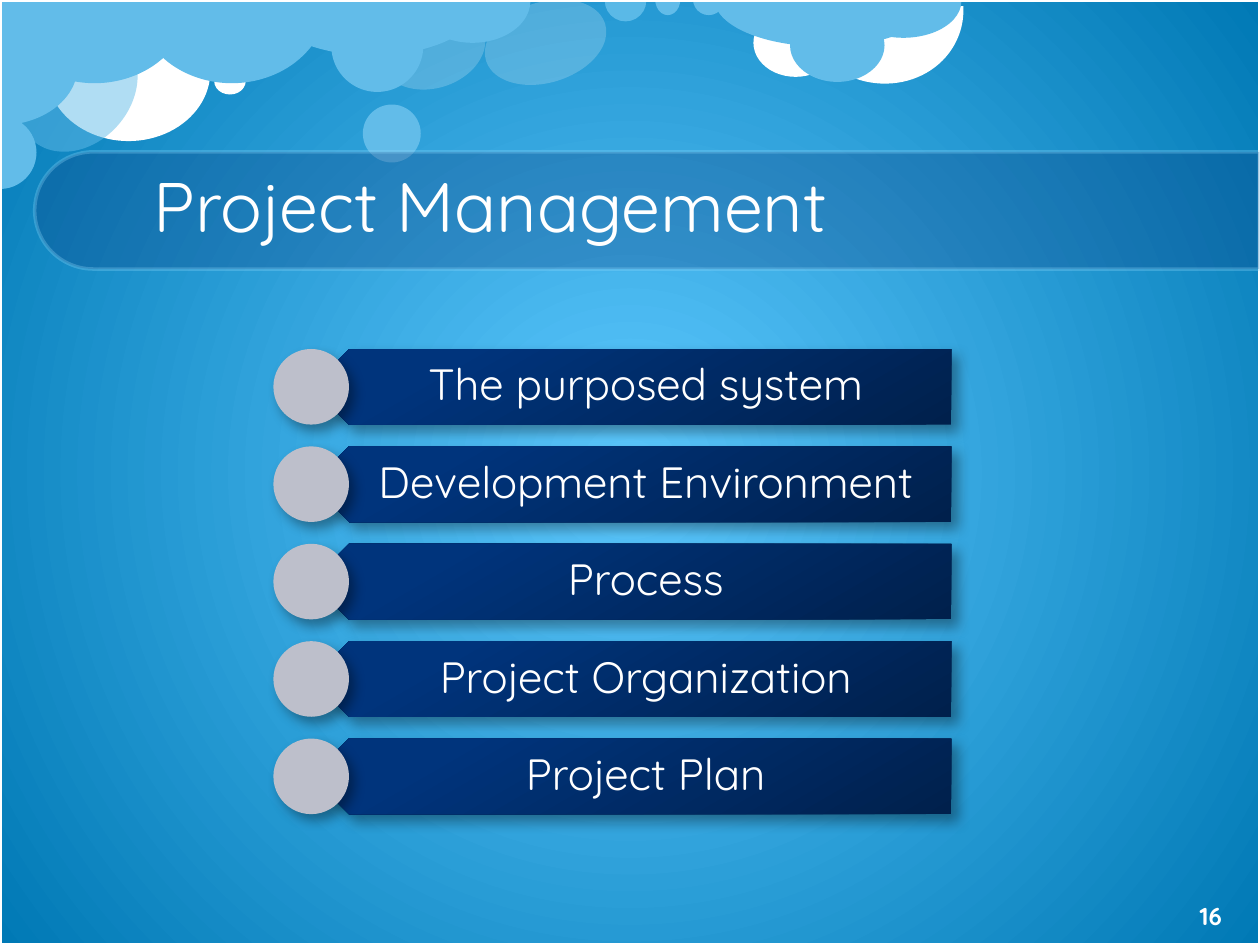
from typing import NamedTuple

from lxml.etree import SubElement
from pptx import Presentation
from pptx.dml.color import RGBColor
from pptx.enum.shapes import MSO_SHAPE
from pptx.enum.text import MSO_ANCHOR, MSO_AUTO_SIZE, PP_ALIGN
from pptx.oxml.ns import qn
from pptx.util import Inches, Pt

WHITE = RGBColor(0xFF, 0xFF, 0xFF)
BLACK = RGBColor(0x00, 0x00, 0x00)
CLOUD = RGBColor(0x62, 0xBC, 0xE9)
PALE = RGBColor(0x8F, 0xD9, 0xFB)
BAND = RGBColor(0x07, 0x37, 0x79)
SKY_CENTRE = RGBColor(0x5D, 0xC9, 0xFF)
SKY_EDGE = RGBColor(0x00, 0x79, 0xB5)
NAVY_DARK = RGBColor(0x00, 0x20, 0x4C)
NAVY = RGBColor(0x00, 0x34, 0x7C)
NAVY_END = RGBColor(0x00, 0x34, 0x7D)
DISC = RGBColor(0xBD, 0xBF, 0xCB)

FONT = "Quicksand"
COLUMNS, ROWS = 100, 75
SLIDE_WIDTH, SLIDE_HEIGHT = Inches(10), Inches(7.5)

HALF = (0, 108.001)
PUFF = (0, 107.771)
CROWN = (151.797, 44.48)


class Frame(NamedTuple):
    left: float
    top: float
    width: float
    height: float

    def lengths(self) -> tuple:
        column, row = SLIDE_WIDTH / COLUMNS, SLIDE_HEIGHT / ROWS
        return (round(self.left * column), round(self.top * row),
                round(self.width * column), round(self.height * row))


class Cloud(NamedTuple):
    frame: Frame
    kind: MSO_SHAPE = MSO_SHAPE.OVAL
    colour: RGBColor = CLOUD
    opacity: int = 100
    rotation: float = 0
    adjustments: tuple = ()


PIE = MSO_SHAPE.PIE
OVAL = MSO_SHAPE.OVAL
CLOUDS = [
    Cloud(Frame(31.1, -0.5, 6.4, 8.6), OVAL, WHITE, 20, 72.8),
    Cloud(Frame(3.7, 0.1, 13, 11.1), OVAL, WHITE),
    Cloud(Frame(63.9, -6, 12.1, 13.1), MSO_SHAPE.ARC, WHITE, 100, 106.5, CROWN),
    Cloud(Frame(59.8, 0.7, 6.7, 5.4), OVAL, WHITE),
    Cloud(Frame(-0.1, -6.6, 15.2, 13.2), PIE, adjustments=HALF),
    Cloud(Frame(20.8, -4.4, 17.5, 8.8), PIE, adjustments=HALF),
    Cloud(Frame(28.8, 8.3, 4.6, 4.6)),
    Cloud(Frame(1.9, 1.8, 8.5, 10.7), OVAL, CLOUD, 50, 41.8),
    Cloud(Frame(-2.9, 9.2, 5.8, 5.8), PIE, rotation=270, adjustments=PUFF),
    Cloud(Frame(17, 5.4, 2.5, 2.1), OVAL, WHITE),
    Cloud(Frame(10.8, -6.6, 15.2, 13.2), PIE, adjustments=HALF),
    Cloud(Frame(56.7, -3.8, 17.5, 7.5), PIE, adjustments=HALF),
    Cloud(Frame(62.7, 0.7, 7.5, 5.8)),
    Cloud(Frame(67.1, -2.8, 9.2, 5.8), PIE, adjustments=HALF),
    Cloud(Frame(40.1, -1.6, 6.4, 9.9), OVAL, WHITE, 20, 72.8),
    Cloud(Frame(48, -1.6, 3.3, 3.3), PIE, PALE, 50, adjustments=PUFF),
    Cloud(Frame(52, -1.3, 2, 2.5), PIE, adjustments=PUFF),
    Cloud(Frame(55, -1.3, 2.5, 2.5), PIE, adjustments=PUFF),
    Cloud(Frame(26.3, 0, 7.3, 7.3)),
    Cloud(Frame(32.9, -3.3, 9.2, 6.7), PIE, adjustments=HALF),
    Cloud(Frame(-4.7, -0.9, 9.3, 12.4), PIE, rotation=270, adjustments=HALF),
]
TOPICS = ["The purposed system", "Development Environment", "Process",
          "Project Organization", "Project Plan"]
FIRST_TOP, STEP, BAR_HEIGHT = 27.7, 7.73, 6


def add_colour(parent, colour: RGBColor, opacity: int = 100):
    node = SubElement(parent, qn("a:srgbClr"), val=str(colour))
    if opacity < 100:
        SubElement(node, qn("a:alpha"), val=str(opacity * 1000))


def set_opacity(properties, opacity: int):
    for node in properties.findall(f"{qn('a:solidFill')}/{qn('a:srgbClr')}"):
        SubElement(node, qn("a:alpha"), val=str(opacity * 1000))


def add_gradient(holder, fill, stops: list):
    fill.background()
    empty = holder.find(qn("a:noFill"))
    gradient = SubElement(holder, qn("a:gradFill"), rotWithShape="0")
    holder.replace(empty, gradient)
    stop_list = SubElement(gradient, qn("a:gsLst"))
    for position, colour in stops:
        add_colour(SubElement(stop_list, qn("a:gs"), pos=str(position * 1000)), colour)
    return gradient


def add_shadow(shape):
    effects = shape.element.spPr.find(qn("a:effectLst"))
    shadow = SubElement(effects, qn("a:outerShdw"), blurRad=str(Pt(7)), dist=str(Pt(5)),
                        dir=str(50 * 60000), algn="tl", rotWithShape="0")
    add_colour(shadow, BLACK, 35)


def add_plain_shape(shapes, kind: MSO_SHAPE, frame: Frame, colour=None,
                    opacity: int = 100, rotation: float = 0, adjustments: tuple = ()):
    shape = shapes.add_shape(kind, *frame.lengths())
    shape.shadow.inherit = False
    shape.rotation = rotation
    for index, value in enumerate(adjustments):
        shape.adjustments[index] = value
    shape.line.fill.background()
    if colour is None:
        shape.fill.background()
    else:
        shape.fill.solid()
        shape.fill.fore_color.rgb = colour
        if opacity < 100:
            set_opacity(shape.element.spPr, opacity)
    return shape


def set_line(shape, colour: RGBColor, opacity: int = 100):
    shape.line.color.rgb = colour
    shape.line.width = Pt(2)
    if opacity < 100:
        set_opacity(shape.element.spPr.find(qn("a:ln")), opacity)


def write(box, text: str, size: float, align: PP_ALIGN, bold: bool = False):
    box.text_frame.word_wrap = True
    box.text_frame.auto_size = MSO_AUTO_SIZE.NONE
    box.text_frame.vertical_anchor = MSO_ANCHOR.MIDDLE
    para = box.text_frame.paragraphs[0]
    para.alignment = align
    span = para.add_run()
    span.text = text
    span.font.name = FONT
    span.font.size = Pt(size)
    span.font.bold = bold
    span.font.color.rgb = WHITE
    return para


def draw_background(page):
    fill = page.background.fill
    fill.background()
    holder = page.element.find(f".//{qn('p:bgPr')}")
    gradient = add_gradient(holder, fill, [(0, SKY_CENTRE), (100, SKY_EDGE)])
    path = SubElement(gradient, qn("a:path"), path="circle")
    SubElement(path, qn("a:fillToRect"), l="50000", t="50000", r="50000", b="50000")


def draw_scenery(page):
    sky = page.shapes.add_group_shape()
    for cloud in CLOUDS:
        add_plain_shape(sky.shapes, cloud.kind, cloud.frame, cloud.colour,
                        cloud.opacity, cloud.rotation, cloud.adjustments)
    border = add_plain_shape(page.shapes, MSO_SHAPE.RECTANGLE, Frame(0, 0, COLUMNS, ROWS))
    set_line(border, WHITE)
    band = add_plain_shape(page.shapes, MSO_SHAPE.ROUND_2_SAME_RECTANGLE,
                           Frame(46.7, -31.9, 9.3, 97.2), BAND, 30, 270, (0.5, 0))
    set_line(band, PALE, 30)


def draw_title(page, text: str):
    title = page.shapes.title
    title.left, title.top, title.width, title.height = Frame(11.2, 11.8, 81, 7.8).lengths()
    write(title, text, 40, PP_ALIGN.LEFT).line_spacing = Pt(56)
    page.shapes.element.append(title.element)


def draw_topic(shapes, text: str, top: float):
    bar = add_plain_shape(shapes, MSO_SHAPE.PENTAGON,
                          Frame(24.7, top, 50.8, BAR_HEIGHT), rotation=180)
    gradient = add_gradient(bar.element.spPr, bar.fill,
                            [(0, NAVY_DARK), (80, NAVY), (100, NAVY_END)])
    SubElement(gradient, qn("a:lin"), ang=str(240 * 60000), scaled="0")
    add_shadow(bar)
    label = shapes.add_textbox(*Frame(26.2, top, 49.4, BAR_HEIGHT).lengths())
    label.text_frame.margin_left, label.text_frame.margin_right = Inches(0.26), Inches(0.19)
    label.text_frame.margin_top = label.text_frame.margin_bottom = Inches(0.1)
    write(label, text, 25, PP_ALIGN.CENTER).line_spacing = 0.9
    disc = add_plain_shape(shapes, OVAL, Frame(21.7, top, BAR_HEIGHT, BAR_HEIGHT), DISC)
    add_shadow(disc)


def main():
    deck = Presentation()
    deck.slide_width, deck.slide_height = SLIDE_WIDTH, SLIDE_HEIGHT
    page = deck.slides.add_slide(deck.slide_layouts[5])
    draw_background(page)
    draw_scenery(page)
    draw_title(page, "Project Management")
    number = page.shapes.add_textbox(*Frame(92.2, 70.5, 7.8, 4.3).lengths())
    write(number, "16", 14, PP_ALIGN.CENTER, bold=True)
    topics = page.shapes.add_group_shape()
    for index, text in enumerate(TOPICS):
        draw_topic(topics.shapes, text, FIRST_TOP + index * STEP)
    deck.save("out.pptx")


if __name__ == "__main__":
    main()
